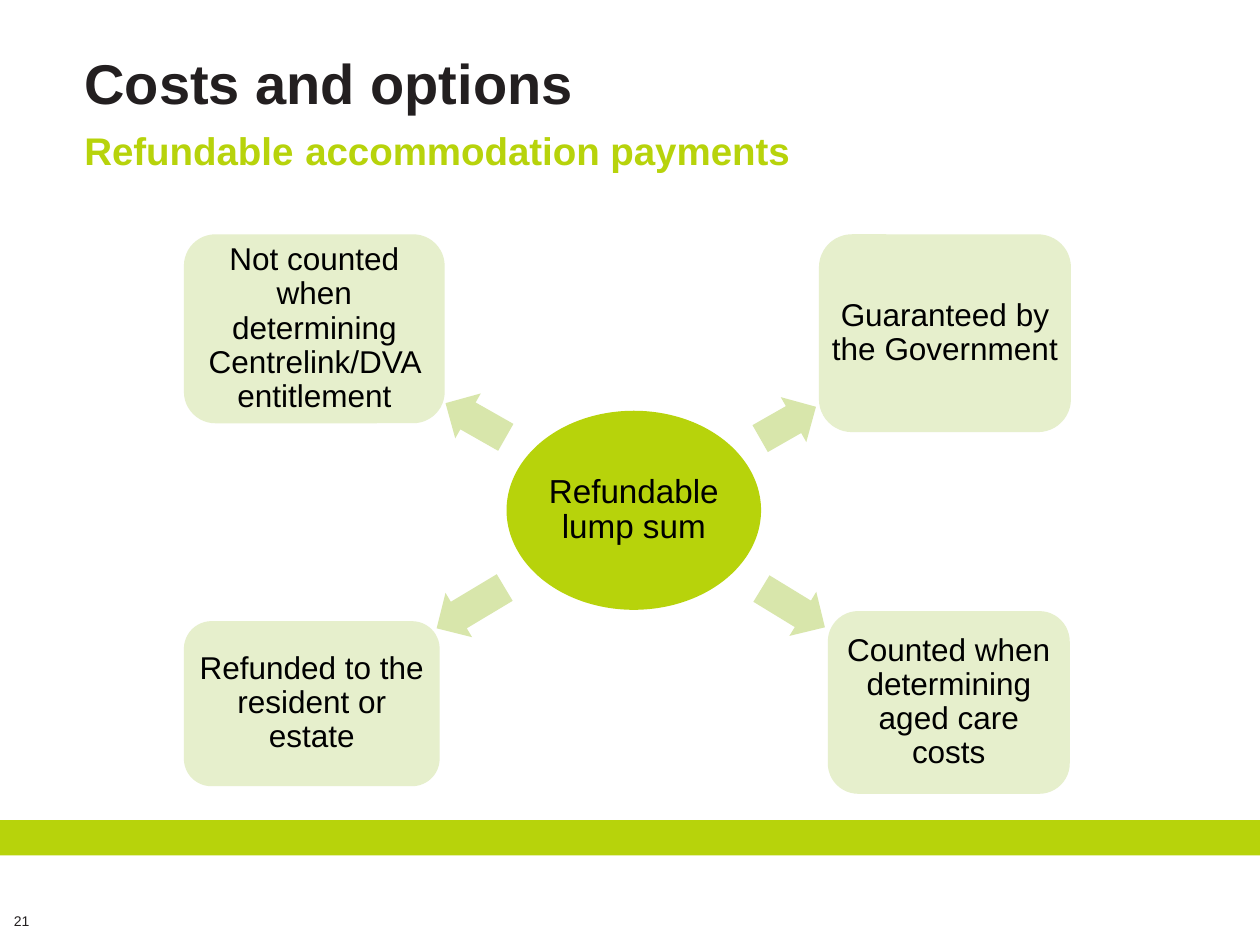
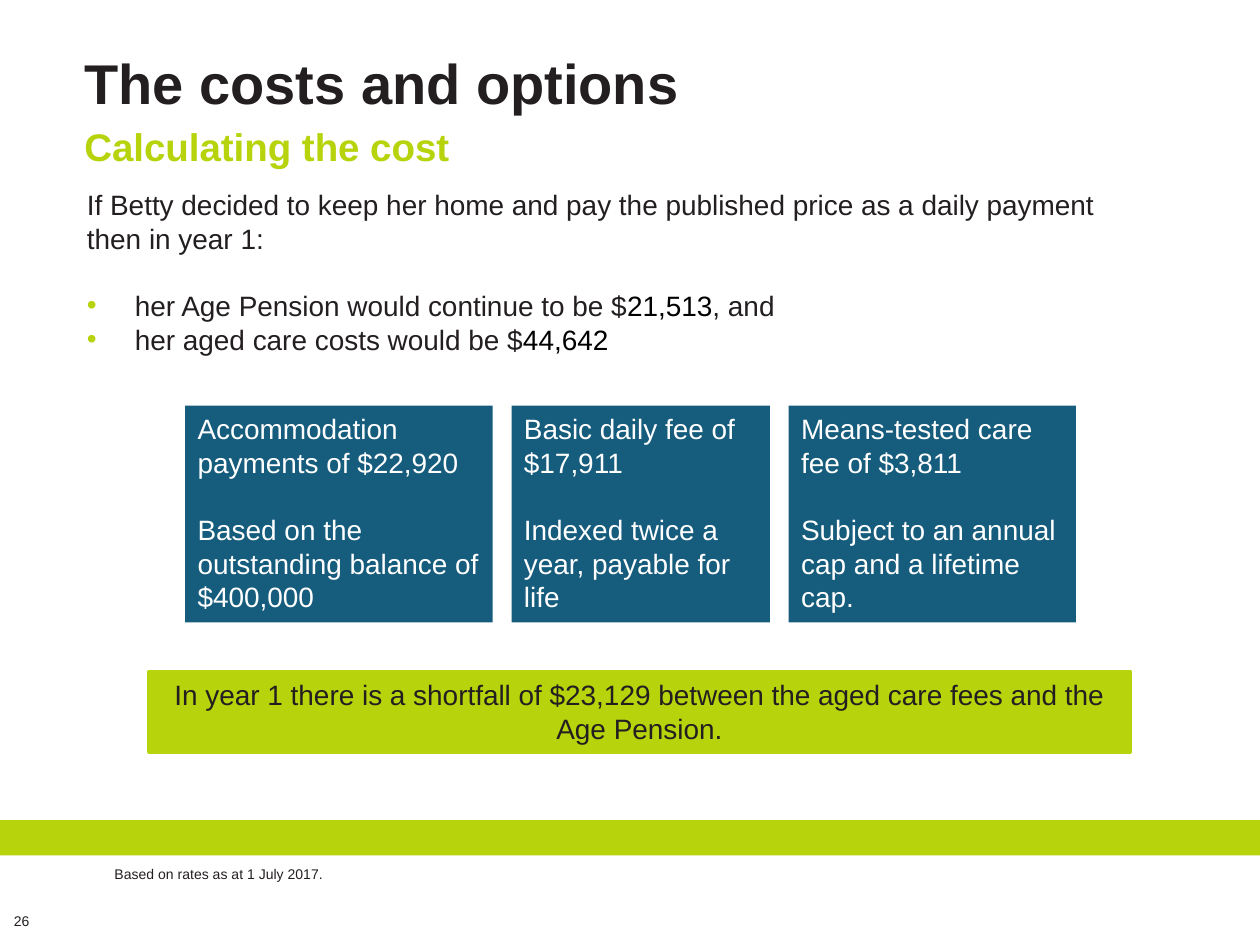
from lxml import etree
from pptx import Presentation
from pptx.dml.color import RGBColor
from pptx.enum.shapes import MSO_SHAPE
from pptx.enum.text import MSO_ANCHOR, MSO_AUTO_SIZE, PP_ALIGN
from pptx.oxml.ns import qn
from pptx.util import Emu, Pt

RECTANGLE = MSO_SHAPE.RECTANGLE
ROUNDED = MSO_SHAPE.ROUNDED_RECTANGLE
OVAL = MSO_SHAPE.OVAL
ARROW = MSO_SHAPE.RIGHT_ARROW
TOP, MIDDLE = MSO_ANCHOR.TOP, MSO_ANCHOR.MIDDLE
LEFT, CENTER = PP_ALIGN.LEFT, PP_ALIGN.CENTER
NO_AUTOFIT = MSO_AUTO_SIZE.NONE

PX_PER_INCH = 100
SCALE = 914400 // PX_PER_INCH
FONT = "Arial"
BLANK_LINE = 19.2
TITLE_ONLY, TITLE_AND_CONTENT = 5, 1
COLORS = {
    "lime": "B7D30B",
    "ink": "231F20",
    "black": "000000",
    "white": "FFFFFF",
    "pale": "E6EFCC",
    "arrow": "D8E6AB",
    "blue": "165C7D",
}


def px(value):
    return Emu(value * SCALE)


def color(name):
    return RGBColor.from_string(COLORS[name])


def place(shape, left, top, width, height):
    shape.left, shape.top = px(left), px(top)
    shape.width, shape.height = px(width), px(height)


def setup_frame(text_frame, anchor=TOP, inset_x=0, inset_y=0):
    text_frame.word_wrap = True
    text_frame.auto_size = NO_AUTOFIT
    text_frame.vertical_anchor = anchor
    text_frame.margin_left = text_frame.margin_right = px(inset_x)
    text_frame.margin_top = text_frame.margin_bottom = px(inset_y)


def format_run(run, size, color_name, bold=False):
    run.font.name = FONT
    run.font.size = Pt(size)
    run.font.bold = bold
    run.font.color.rgb = color(color_name)


def write(paragraph, text, size, color_name, bold=False, align=LEFT, before=0, spacing=1.0):
    paragraph.text = text
    paragraph.alignment = align
    paragraph.space_before = Pt(before)
    paragraph.line_spacing = spacing
    for run in paragraph.runs:
        format_run(run, size, color_name, bold)


def append_run(paragraph, text, size, color_name, bold=False):
    run = paragraph.add_run()
    run.text = text
    format_run(run, size, color_name, bold)


def set_bullet(paragraph, indent=0):
    properties = paragraph._p.get_or_add_pPr()
    properties.set("marL", str(px(indent)))
    properties.set("indent", str(-px(indent)))
    if not indent:
        etree.SubElement(properties, qn("a:buNone"))
        return
    bullet_color = etree.SubElement(properties, qn("a:buClr"))
    etree.SubElement(bullet_color, qn("a:srgbClr"), val=COLORS["lime"])
    etree.SubElement(properties, qn("a:buFont"), typeface=FONT)
    etree.SubElement(properties, qn("a:buChar"), char="•")


def add_block(slide, kind, box, fill):
    shape = slide.shapes.add_shape(kind, *map(px, box))
    shape.shadow.inherit = False
    shape.fill.solid()
    shape.fill.fore_color.rgb = color(fill)
    shape.line.fill.background()
    return shape


def add_text(slide, box, text, size, color_name, bold=False, inset_x=0, inset_y=0):
    text_box = slide.shapes.add_textbox(*map(px, box))
    setup_frame(text_box.text_frame, TOP, inset_x, inset_y)
    paragraph = text_box.text_frame.paragraphs[0]
    write(paragraph, text, size, color_name, bold)
    return paragraph


def add_node(slide, kind, box, fill, text, size):
    shape = add_block(slide, kind, box, fill)
    setup_frame(shape.text_frame, MIDDLE, 2, 2)
    write(shape.text_frame.paragraphs[0], text, size, "black", align=CENTER, spacing=0.9)


def add_arrow(slide, box, rotation):
    arrow = add_block(slide, ARROW, box, "arrow")
    arrow.adjustments[0] = 0.6
    arrow.adjustments[1] = 0.5
    arrow.rotation = rotation


def add_fee_card(slide, box, heading, detail):
    card = add_block(slide, RECTANGLE, box, "blue")
    text_frame = card.text_frame
    setup_frame(text_frame, TOP, 10, 5)
    write(text_frame.paragraphs[0], heading, 16, "white")
    write(text_frame.add_paragraph(), detail, 16, "white", before=BLANK_LINE)


def add_base_slide(presentation, layout, title, subtitle, number):
    slide = presentation.slides.add_slide(presentation.slide_layouts[layout])
    add_block(slide, RECTANGLE, (0, 651, 1000, 28), "lime")
    add_text(slide, (11, 724, 48, 13), number, 8, "ink")
    heading = slide.shapes.title
    place(heading, 67, 49, 880, 39)
    setup_frame(heading.text_frame)
    write(heading.text_frame.paragraphs[0], title, 32, "ink", bold=True, spacing=0.8)
    subtitle_paragraph = add_text(slide, (67, 98, 874, 39), subtitle, 22, "lime", bold=True)
    return slide, subtitle_paragraph


def build_payments_slide(presentation):
    slide, subtitle = add_base_slide(
        presentation, TITLE_ONLY, "Costs and options", "Refundable", "21")
    append_run(subtitle, " ", 24, "ink", bold=True)
    append_run(subtitle, "accommodation payments", 22, "lime", bold=True)

    add_node(slide, OVAL, (402, 326, 202, 158), "lime", "Refundable lump sum", 19)
    features = [
        ((146, 186, 207, 150), "Not counted when determining Centrelink/DVA entitlement",
         (350, 313, 55, 41), 209.6),
        ((650, 186, 200, 157), "Guaranteed by the Government",
         (600, 315, 51, 41), 330.3),
        ((657, 485, 192, 145), "Counted when determining aged care costs",
         (600, 462, 59, 41), 31.4),
        ((146, 493, 203, 131), "Refunded to the resident or estate",
         (342, 462, 63, 41), 149.1),
    ]
    for box, text, arrow_box, rotation in features:
        add_arrow(slide, arrow_box, rotation)
        add_node(slide, ROUNDED, box, "pale", text, 18)


def fill_body(body):
    place(body, 59, 144, 843, 333)
    text_frame = body.text_frame
    setup_frame(text_frame, TOP, 10, 5)
    intro = text_frame.paragraphs[0]
    set_bullet(intro)
    write(intro, "If Betty decided to keep her home and pay the published price "
          "as a daily payment then in year 1:", 16, "ink")
    points = [
        ("her Age Pension would continue to be $", "21,513", ", and", BLANK_LINE),
        ("her aged care costs would be $", "44,642", "", 0),
    ]
    for lead, amount, ending, before in points:
        paragraph = text_frame.add_paragraph()
        set_bullet(paragraph, 38)
        write(paragraph, lead, 16, "ink", before=before)
        append_run(paragraph, amount, 16, "black")
        if ending:
            append_run(paragraph, ending, 16, "ink")


def build_cost_slide(presentation):
    slide, _ = add_base_slide(
        presentation, TITLE_AND_CONTENT, "The costs and options", "Calculating the cost", "26")
    fill_body(slide.placeholders[1])
    add_text(slide, (81, 682, 672, 54), "Based on rates as at 1 July 2017.", 8, "ink",
             inset_x=10, inset_y=5)

    shortfall = add_block(slide, RECTANGLE, (118, 533, 779, 64), "lime")
    shortfall.line.color.rgb = color("lime")
    shortfall.line.width = Pt(2)
    setup_frame(shortfall.text_frame, TOP, 10, 5)
    write(shortfall.text_frame.paragraphs[0],
          "In year 1 there is a shortfall of $23,129 between the aged care fees "
          "and the Age Pension.", 16, "ink", align=CENTER)

    fees = [
        (244, "Accommodation payments of $22,920",
         "Based on the outstanding balance of $400,000"),
        (205, "Basic daily fee of $17,911", "Indexed twice a year, payable for life"),
        (228, "Means-tested care fee of $3,811", "Subject to an annual cap and a lifetime cap."),
    ]
    left, gap = 147, 15
    for width, heading, detail in fees:
        add_fee_card(slide, (left, 322, width, 172), heading, detail)
        left += width + gap


def main():
    presentation = Presentation()
    presentation.slide_width, presentation.slide_height = px(1000), px(750)
    build_payments_slide(presentation)
    build_cost_slide(presentation)
    presentation.save("out.pptx")


if __name__ == "__main__":
    main()
